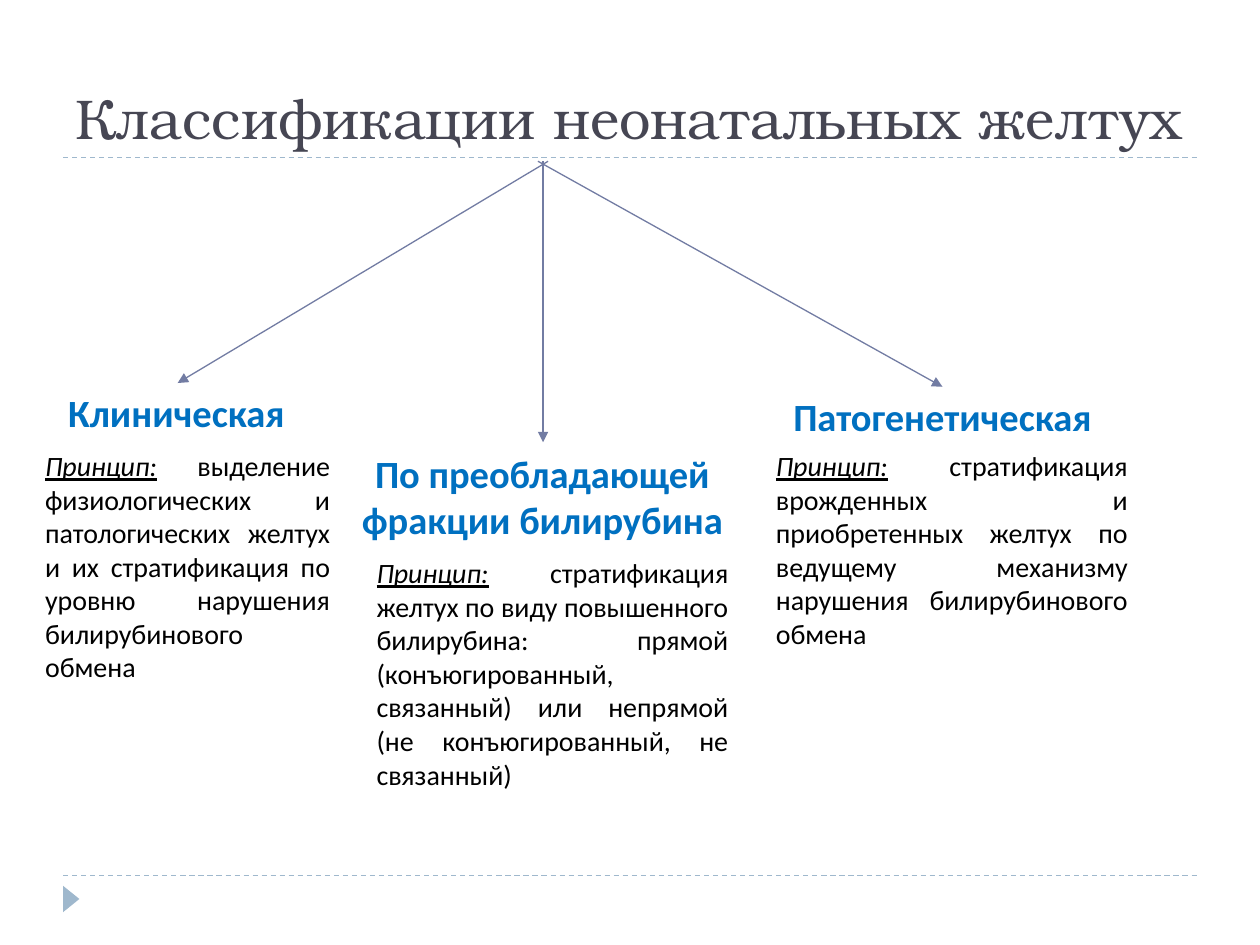
"""Build the slide that classifies neonatal jaundice by three principles."""
from dataclasses import dataclass

from lxml.etree import SubElement
from pptx import Presentation
from pptx.dml.color import RGBColor
from pptx.enum.dml import MSO_LINE_DASH_STYLE as Dash
from pptx.enum.shapes import MSO_CONNECTOR as Connector, MSO_SHAPE as Shape
from pptx.enum.text import MSO_ANCHOR as Anchor, MSO_AUTO_SIZE as AutoSize, PP_ALIGN as Align
from pptx.oxml.ns import qn
from pptx.util import Emu, Inches, Pt

WHITE = RGBColor(0xFF, 0xFF, 0xFF)
BLACK = RGBColor(0x00, 0x00, 0x00)
SLATE = RGBColor(0x46, 0x46, 0x53)
HEADING_BLUE = RGBColor(0x00, 0x70, 0xC0)
ARROW_BLUE = RGBColor(0x72, 0x7C, 0xA3)
PALE_BLUE = RGBColor(0x9F, 0xB8, 0xCD)
BODY_FONT = "Calibri"
TITLE_FONT = "TeX Gyre Bonum"
WIDTH, HEIGHT = Inches(10), Inches(7.5)
COLS, ROWS = 100, 75


@dataclass(frozen=True)
class Box:
    """A rectangle in grid columns and rows."""
    col: float
    row: float
    cols: float
    rows: float

    def emu(self) -> tuple[Emu, Emu, Emu, Emu]:
        """Return left, top, width and height."""
        return x(self.col), y(self.row), x(self.cols), y(self.rows)


@dataclass(frozen=True)
class Branch:
    """One classification with its heading, principle and arrow."""
    heading: str
    principle: str
    heading_box: Box
    principle_box: Box
    start_col: float
    tip: tuple[float, float]


BRANCHES = (
    Branch("Клиническая",
           "выделение физиологических и патологических желтух и их "
           "стратификация по уровню нарушения билирубинового обмена",
           Box(2.6, 30.4, 22.8, 4.7), Box(2.6, 35.1, 24.6, 19.9), 43.5, (14.1, 30.4)),
    Branch("По преобладающей фракции билирубина",
           "стратификация желтух по виду повышенного билирубина: прямой "
           "(конъюгированный, связанный) или непрямой (не конъюгированный, не связанный)",
           Box(27.2, 35.2, 31.7, 8.4), Box(28.9, 43.6, 29.9, 19.9), 43.1, (43.1, 35.1)),
    Branch("Патогенетическая",
           "стратификация врожденных и приобретенных желтух по ведущему "
           "механизму нарушения билирубинового обмена",
           Box(57.5, 30.7, 34.6, 4.7), Box(60.6, 35.1, 29.9, 17.2), 42.7, (74.8, 30.7)),
)
ARROW_ROW = 12.8
RULE_ROWS = (69.5, 12.5)


def x(col: float) -> Emu:
    """Convert grid columns to a length."""
    return Emu(round(WIDTH * col / COLS))


def y(row: float) -> Emu:
    """Convert grid rows to a length."""
    return Emu(round(HEIGHT * row / ROWS))


def add_run(p, text: str, size: float, color: RGBColor, font: str = BODY_FONT,
            bold: bool = False, marked: bool = False) -> None:
    """Add a run, italic and underlined when marked."""
    r = p.add_run()
    r.text = text
    r.font.name, r.font.size, r.font.bold = font, Pt(size), bold
    r.font.italic = r.font.underline = marked
    r.font.color.rgb = color


def add_line(s, start: tuple[float, float], end: tuple[float, float],
             color: RGBColor, dashed: bool = False, arrow: bool = False) -> None:
    """Draw a thin straight line between two grid points."""
    line = s.shapes.add_connector(Connector.STRAIGHT, x(start[0]), y(start[1]), x(end[0]), y(end[1]))
    line.line.color.rgb = color
    line.line.width = Pt(0.75)
    if dashed:
        line.line.dash_style = Dash.DASH
    props = line._element.spPr
    if arrow:
        SubElement(props.find(qn("a:ln")), qn("a:tailEnd"), type="triangle")
    SubElement(props, qn("a:effectLst"))


def add_paragraph(s, box: Box, align: Align):
    """Add a wrapping text box and return its paragraph."""
    tf = s.shapes.add_textbox(*box.emu()).text_frame
    tf.word_wrap = True
    tf.auto_size = AutoSize.SHAPE_TO_FIT_TEXT
    p = tf.paragraphs[0]
    p.alignment = align
    return p


def add_branch(s, branch: Branch) -> None:
    """Draw the arrow, heading and principle of a classification."""
    add_line(s, (branch.start_col, ARROW_ROW), branch.tip, ARROW_BLUE, arrow=True)
    p = add_paragraph(s, branch.heading_box, Align.CENTER)
    add_run(p, branch.heading, 22, HEADING_BLUE, bold=True)
    p = add_paragraph(s, branch.principle_box, Align.JUSTIFY)
    add_run(p, "Принцип:", 16, BLACK, marked=True)
    add_run(p, " " + branch.principle, 16, BLACK)


def add_frame(s) -> None:
    """Draw the dashed rules and the corner triangle."""
    for row in RULE_ROWS:
        add_line(s, (5, row), (95, row), PALE_BLUE, dashed=True)
    sp = s.shapes.add_shape(Shape.ISOSCELES_TRIANGLE, *Box(4.6, 70.7, 2.1, 1.3).emu())
    sp.rotation = 90
    sp.fill.solid()
    sp.fill.fore_color.rgb = PALE_BLUE
    sp.line.fill.background()
    sp.shadow.inherit = False


def set_title(s, text: str) -> None:
    """Move and format the title placeholder."""
    title = s.shapes.title
    title.left, title.top, title.width, title.height = Box(5, 2.5, 90, 10).emu()
    tf = title.text_frame
    tf.word_wrap = True
    tf.auto_size = AutoSize.NONE
    tf.vertical_anchor = Anchor.BOTTOM
    tf.margin_right = 0
    p = tf.paragraphs[0]
    p.alignment = Align.LEFT
    add_run(p, text, 32, SLATE, TITLE_FONT)


def main() -> None:
    """Build and save the slide."""
    prs = Presentation()
    prs.slide_width, prs.slide_height = WIDTH, HEIGHT
    s = prs.slides.add_slide(prs.slide_layouts[5])
    s.background.fill.solid()
    s.background.fill.fore_color.rgb = WHITE
    add_frame(s)
    set_title(s, "Классификации неонатальных желтух")
    for branch in BRANCHES:
        add_branch(s, branch)
    prs.save("out.pptx")


if __name__ == "__main__":
    main()
